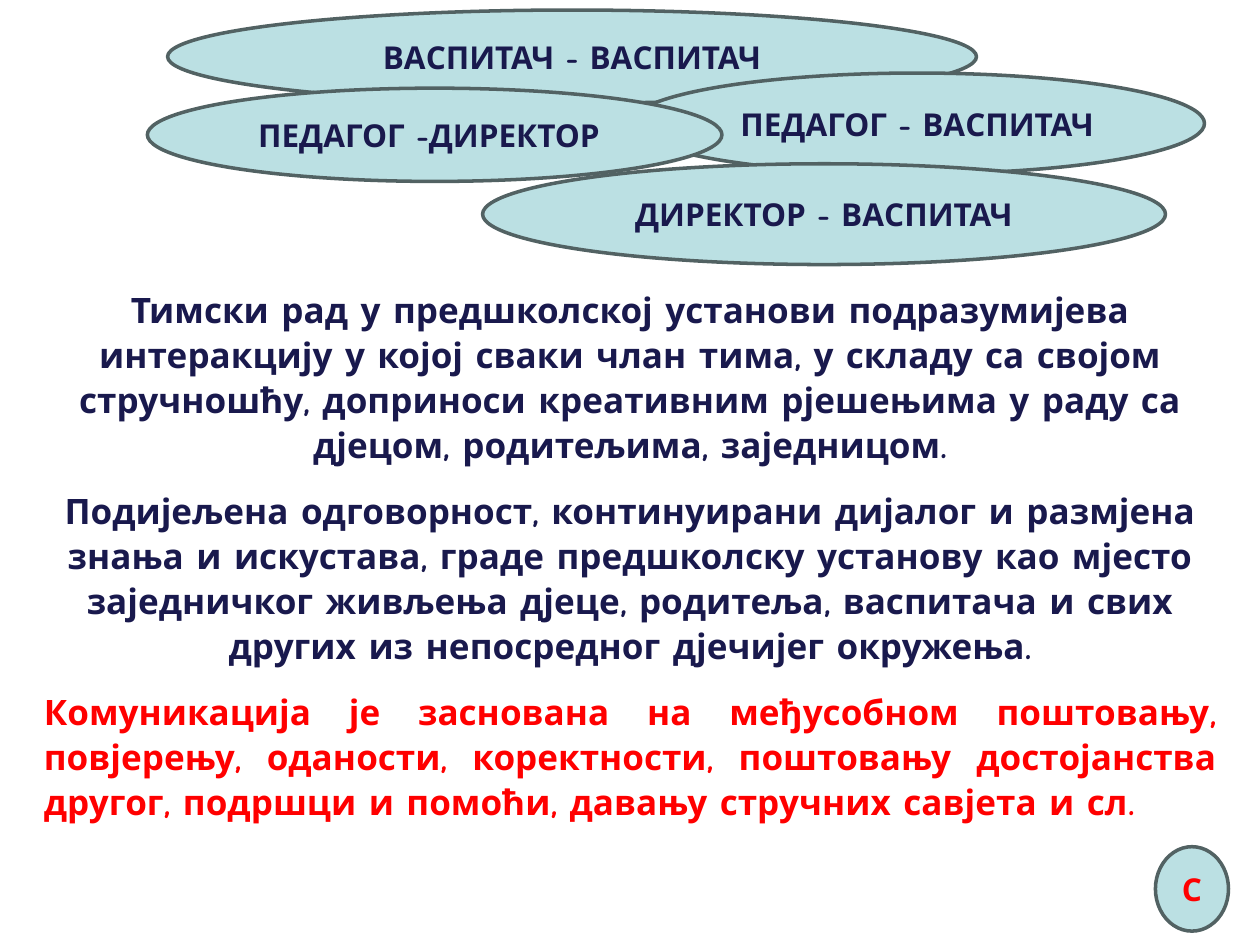
from pptx import Presentation
from pptx import util as u
from pptx.dml.color import RGBColor
from pptx.enum import shapes, text

FONT = "Comic Neue"
COLORS = {"navy": "19194D", "red": "FF0000", "fill": "BBE0E3", "line": "526263"}

# Ellipses: label, box (left, top, width, height), text colour
TEAM_PAIRS = [
    ("ВАСПИТАЧ - ВАСПИТАЧ", (1.33, 0.08, 6.42, 0.74), "navy"),
    ("ПЕДАГОГ - ВАСПИТАЧ", (5, 0.58, 4.56, 0.8), "navy"),
    ("ПЕДАГОГ -ДИРЕКТОР ", (1.17, 0.7, 4.56, 0.74), "navy"),
    ("ДИРЕКТОР - ВАСПИТАЧ", (3.83, 1.3, 5.42, 0.8), "navy"),
]
CORNER_MARK = ("С", (9.17, 6.72, 0.58, 0.67), "red")

BODY_BOX = (0.25, 2.22, 9.5, 4.58)
CENTER, JUSTIFY = text.PP_ALIGN.CENTER, text.PP_ALIGN.JUSTIFY
BODY = [
    ("Тимски рад у предшколској установи подразумијева интеракцију у којој "
     "сваки члан тима, у складу са својом стручношћу, доприноси креативним "
     "рјешењима у раду са дјецом, родитељима, заједницом.", CENTER, "navy"),
    ("Подијељена одговорност, континуирани дијалог и размјена знања и "
     "искустава, граде предшколску установу као мјесто заједничког живљења "
     "дјеце, родитеља, васпитача и свих других из непосредног дјечијег "
     "окружења.", CENTER, "navy"),
    ("Комуникација је заснована на међусобном поштовању, повјерењу, оданости, "
     "коректности, поштовању достојанства другог, подршци и помоћи, давању "
     "стручних савјета и сл.", JUSTIFY, "red"),
]


def rgb(name):
    return RGBColor.from_string(COLORS[name])


def inches(box):
    return [u.Inches(v) for v in box]


def write(p, words, size, color, align):
    p.text = words
    p.alignment = align
    for r in p.runs:
        r.font.name = FONT
        r.font.size = u.Pt(size)
        r.font.bold = True
        r.font.color.rgb = rgb(color)


def add_ellipse(s, label, box, color):
    sp = s.shapes.add_shape(shapes.MSO_SHAPE.OVAL, *inches(box))
    sp.shadow.inherit = False
    sp.fill.solid()
    sp.fill.fore_color.rgb = rgb("fill")
    sp.line.color.rgb = rgb("line")
    sp.line.width = u.Pt(2)
    tf = sp.text_frame
    tf.vertical_anchor = text.MSO_ANCHOR.MIDDLE
    write(tf.paragraphs[0], label, 18, color, CENTER)


def add_body(s, box):
    tf = s.shapes.add_textbox(*inches(box)).text_frame
    tf.word_wrap = True
    for i, (words, align, color) in enumerate(BODY):
        p = tf.add_paragraph() if i else tf.paragraphs[0]
        write(p, words, 20, color, align)
        p.line_spacing = 1.07
        p.space_before = u.Pt(4 if i else 0)
        p.space_after = u.Pt(8)


def main():
    prs = Presentation()
    prs.slide_width, prs.slide_height = u.Inches(10), u.Inches(7.5)
    s = prs.slides.add_slide(prs.slide_layouts[6])

    # Explanation, then the team pairs and the corner mark
    add_body(s, BODY_BOX)
    for ellipse in TEAM_PAIRS + [CORNER_MARK]:
        add_ellipse(s, *ellipse)

    prs.save("out.pptx")


if __name__ == "__main__":
    main()
